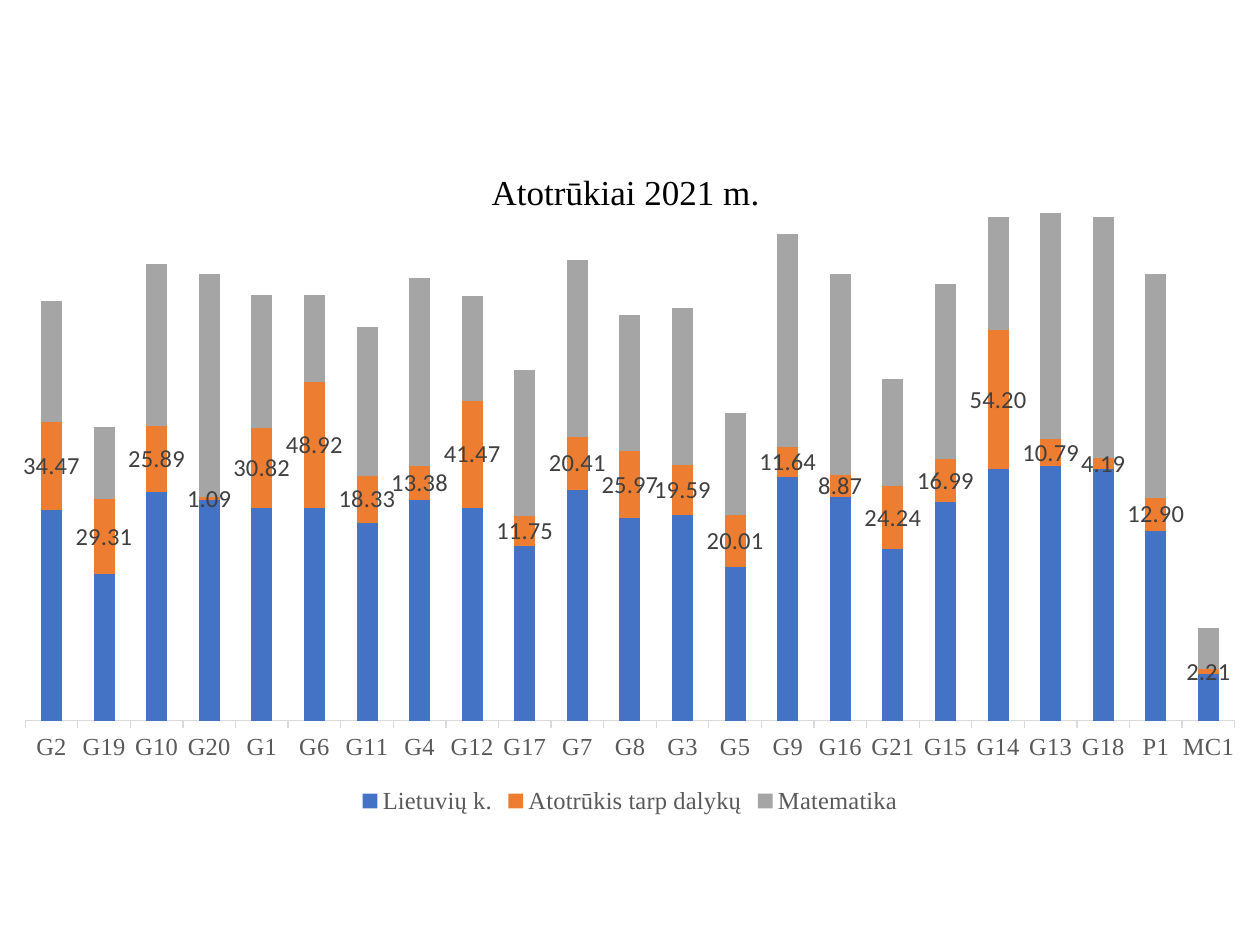
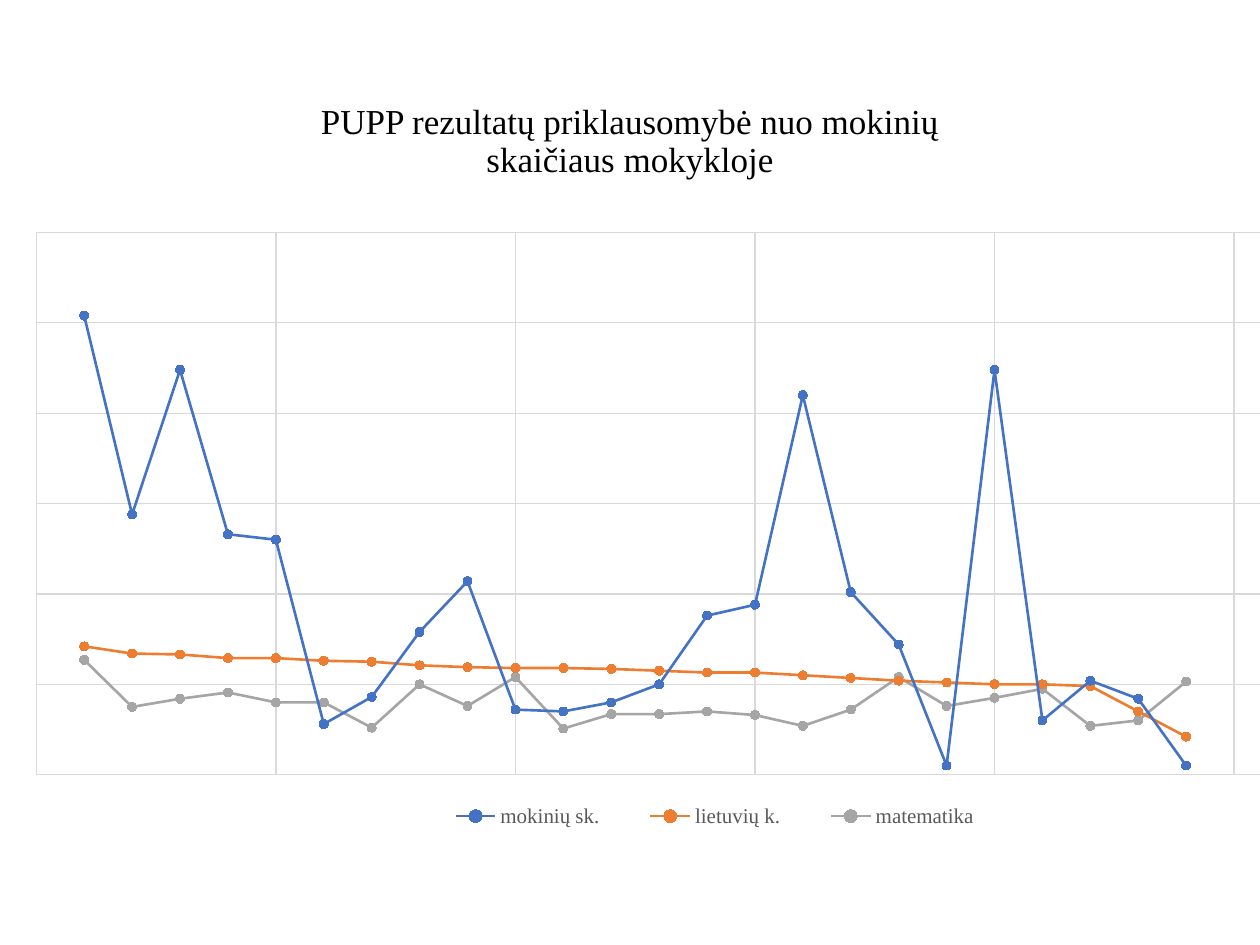
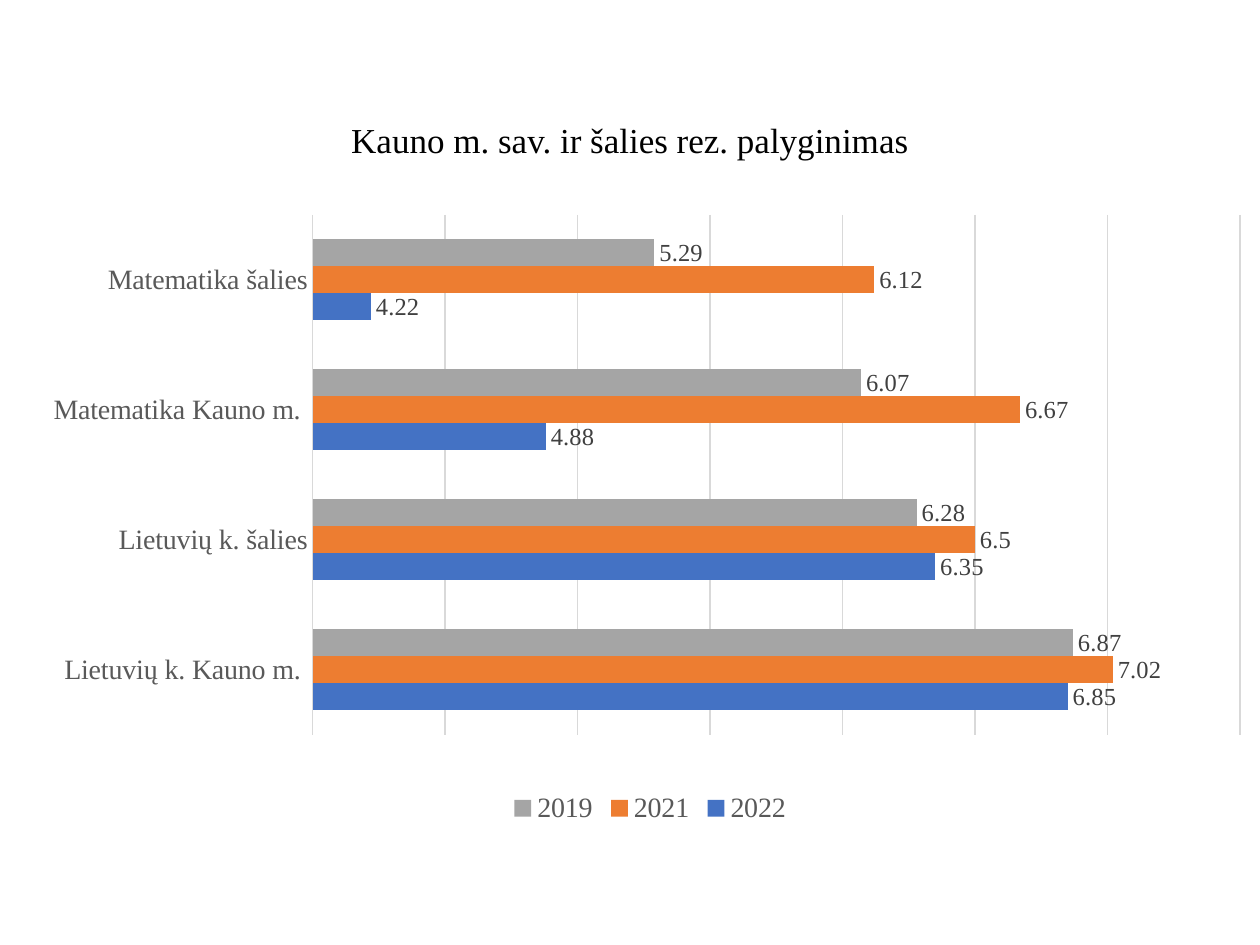
from lxml.etree import SubElement
from pptx import Presentation
from pptx.chart.data import CategoryChartData, XyChartData
from pptx.dml.color import RGBColor
from pptx.enum.chart import (XL_CHART_TYPE, XL_LABEL_POSITION, XL_LEGEND_POSITION,
                             XL_MARKER_STYLE, XL_TICK_LABEL_POSITION, XL_TICK_MARK)
from pptx.enum.text import MSO_ANCHOR, PP_ALIGN
from pptx.oxml.ns import qn
from pptx.util import Inches, Pt

BLACK = RGBColor(0x00, 0x00, 0x00)
AXIS_GREY = RGBColor(0x59, 0x59, 0x59)
LABEL_GREY = RGBColor(0x40, 0x40, 0x40)
RULE_GREY = RGBColor(0xD9, 0xD9, 0xD9)
BLUE = RGBColor(0x44, 0x72, 0xC4)
ORANGE = RGBColor(0xED, 0x7D, 0x31)
GREY = RGBColor(0xA5, 0xA5, 0xA5)
SERIES_COLOURS = (BLUE, ORANGE, GREY)

SERIF = "Times New Roman"
SANS = "Calibri"
COLUMNS, ROWS = 100, 75
SLIDE_WIDTH, SLIDE_HEIGHT = Inches(10), Inches(7.5)
TITLE_BOX = (6.9, 4, 86.2, 14.5)
LOW_TITLE_BOX = (6.9, 12.3, 86.2, 6.2)

GAP_CATEGORIES = ("G2", "G19", "G10", "G20", "G1", "G6", "G11", "G4", "G12", "G17", "G7", "G8",
                  "G3", "G5", "G9", "G16", "G21", "G15", "G14", "G13", "G18", "P1", "MC1")
GAP_SERIES = {
    "Lietuvių k.": (82, 57, 89, 86, 83, 83, 77, 86, 83, 68, 90, 79,
                    80, 60, 95, 87, 67, 85, 98, 99, 98, 74, 18),
    "Atotrūkis tarp dalykų": (34.47, 29.31, 25.89, 1.09, 30.82, 48.92, 18.33, 13.38,
                              41.47, 11.75, 20.41, 25.97, 19.59, 20.01, 11.64, 8.87,
                              24.24, 16.99, 54.2, 10.79, 4.19, 12.9, 2.21),
    "Matematika": (47, 28, 63, 87, 52, 34, 58, 73, 41, 57, 69, 53,
                   61, 40, 83, 78, 42, 68, 44, 88, 94, 87, 16),
}
SCHOOL_SERIES = {
    "mokinių sk. ": (508, 288, 448, 266, 260, 56, 86, 158, 214, 72, 70, 80,
                     100, 176, 188, 420, 202, 144, 10, 448, 60, 104, 84, 10),
    "lietuvių k. ": (142, 134, 133, 129, 129, 126, 125, 121, 119, 118, 118, 117,
                     115, 113, 113, 110, 107, 104, 102, 100, 100, 98, 70, 42),
    "matematika": (127, 75, 84, 91, 80, 80, 52, 100, 76, 108, 51, 67,
                   67, 70, 66, 54, 72, 108, 76, 85, 95, 54, 60, 103),
}
CITY_CATEGORIES = ("Lietuvių k. Kauno m. ", "Lietuvių k. šalies",
                   "Matematika Kauno m. ", "Matematika šalies")
CITY_SERIES = {
    "2022": (6.85, 6.35, 4.88, 4.22),
    "2021": (7.02, 6.5, 6.67, 6.12),
    "2019": (6.87, 6.28, 6.07, 5.29),
}


def apply(target, **values):
    for key, value in values.items():
        setattr(target, key, value)


def style_font(font, size, colour, name=SERIF):
    apply(font, size=Pt(size), name=name)
    font.color.rgb = colour


def style_line(line, colour, width):
    line.color.rgb = colour
    line.width = Pt(width)


def place(box):
    left, top, width, height = box
    across, down = SLIDE_WIDTH / COLUMNS, SLIDE_HEIGHT / ROWS
    return int(left * across), int(top * down), int(width * across), int(height * down)


def add_title(slide, wording, box):
    frame = slide.shapes.add_textbox(*place(box)).text_frame
    apply(frame, word_wrap=True, vertical_anchor=MSO_ANCHOR.MIDDLE)
    heading = frame.paragraphs[0]
    apply(heading, text=wording, alignment=PP_ALIGN.CENTER, line_spacing=0.9)
    for run in heading.runs:
        style_font(run.font, 20, BLACK)


def add_chart(slide, kind, box, data, legend_size):
    chart = slide.shapes.add_chart(kind, *place(box), data).chart
    apply(chart, has_title=False, has_legend=True)
    style_font(chart.font, 10, BLACK, SANS)
    apply(chart.legend, position=XL_LEGEND_POSITION.BOTTOM, include_in_layout=False)
    style_font(chart.legend.font, legend_size, AXIS_GREY)
    chart.plots[0].vary_by_categories = False
    return chart


def category_data(categories, series):
    data = CategoryChartData()
    data.categories = categories
    for name, values in series.items():
        data.add_series(name, values)
    return data


def numbered_data(series):
    data = XyChartData()
    for name, values in series.items():
        points = data.add_series(name)
        for number, value in enumerate(values, 1):
            points.add_data_point(number, value)
    return data


def set_layout(region, index, settings, percents):
    for former in region.findall(qn("c:layout")):
        region.remove(former)
    layout = SubElement(region, qn("c:layout"))
    region.insert(index, layout)
    manual = SubElement(layout, qn("c:manualLayout"))
    shares = {key: str(round(share / 100, 4)) for key, share in percents.items()}
    for key, value in {**settings, "xMode": "edge", "yMode": "edge", **shares}.items():
        SubElement(manual, qn("c:" + key)).set("val", value)


def set_plot_area(chart, **percents):
    area = chart.element.find(".//" + qn("c:plotArea"))
    set_layout(area, 0, {"layoutTarget": "inner"}, percents)


def set_legend_area(chart, **percents):
    legend = chart.element.find(".//" + qn("c:legend"))
    set_layout(legend, 1, {}, percents)


def style_category_axis(axis, size, tick):
    apply(axis, major_tick_mark=tick, minor_tick_mark=XL_TICK_MARK.NONE,
          has_major_gridlines=False,
          tick_label_position=XL_TICK_LABEL_POSITION.NEXT_TO_AXIS)
    style_font(axis.tick_labels.font, size, AXIS_GREY)
    style_line(axis.format.line, RULE_GREY, 0.75)


def hide_scale(axis, low, high, step, grid=True):
    apply(axis, minimum_scale=low, maximum_scale=high, major_unit=step,
          major_tick_mark=XL_TICK_MARK.NONE, has_major_gridlines=grid, visible=False)
    if grid:
        style_line(axis.major_gridlines.format.line, RULE_GREY, 0.75)


def fill_series(chart):
    for series, colour in zip(chart.plots[0].series, SERIES_COLOURS):
        series.invert_if_negative = False
        series.format.fill.solid()
        series.format.fill.fore_color.rgb = colour


def label_series(series, position, number_format, font_name):
    labels = series.data_labels
    apply(labels, show_value=True, position=position,
          number_format=number_format, number_format_is_linked=False)
    style_font(labels.font, 14, LABEL_GREY, font_name)


def gap_slide(slide):
    add_title(slide, "Atotrūkiai 2021 m. ", LOW_TITLE_BOX)
    chart = add_chart(slide, XL_CHART_TYPE.COLUMN_STACKED, (0, 15.47, 100, 49.6),
                      category_data(GAP_CATEGORIES, GAP_SERIES), 14)
    style_category_axis(chart.category_axis, 14, XL_TICK_MARK.OUTSIDE)
    hide_scale(chart.value_axis, 0, 200, 20, grid=False)
    apply(chart.plots[0], gap_width=150, overlap=100)
    fill_series(chart)
    label_series(chart.plots[0].series[1], XL_LABEL_POSITION.CENTER, "0.00", SANS)


def school_size_slide(slide):
    add_title(slide, "PUPP rezultatų priklausomybė nuo mokinių\nskaičiaus mokykloje", TITLE_BOX)
    chart = add_chart(slide, XL_CHART_TYPE.XY_SCATTER_LINES, (1.23, 16.25, 118.1, 51.3),
                      numbered_data(SCHOOL_SERIES), 12)
    set_plot_area(chart, x=1.4, y=4.3, w=96.6, h=83.9)
    set_legend_area(chart, x=27, y=91.1, w=40, h=7)
    hide_scale(chart.category_axis, 0, 30, 5)
    hide_scale(chart.value_axis, 0, 600, 100)
    for series, colour in zip(chart.plots[0].series, SERIES_COLOURS):
        series.smooth = False
        style_line(series.format.line, colour, 1.5)
        apply(series.marker, style=XL_MARKER_STYLE.CIRCLE, size=5)
        series.marker.format.fill.solid()
        series.marker.format.fill.fore_color.rgb = colour
        style_line(series.marker.format.line, colour, 0.75)


def city_slide(slide):
    add_title(slide, "Kauno m. sav. ir šalies rez. palyginimas", TITLE_BOX)
    chart = add_chart(slide, XL_CHART_TYPE.BAR_CLUSTERED, (2, 15.45, 99.2, 50.4),
                      category_data(CITY_CATEGORIES, CITY_SERIES), 16)
    set_plot_area(chart, x=23, y=3.2, w=74.2, h=81.9)
    style_category_axis(chart.category_axis, 16, XL_TICK_MARK.NONE)
    hide_scale(chart.value_axis, 4, 7.5, 0.5)
    chart.plots[0].gap_width = 182
    fill_series(chart)
    for series in chart.plots[0].series:
        label_series(series, XL_LABEL_POSITION.OUTSIDE_END, "General", SERIF)


def main():
    deck = Presentation()
    apply(deck, slide_width=SLIDE_WIDTH, slide_height=SLIDE_HEIGHT)
    for build in (gap_slide, school_size_slide, city_slide):
        build(deck.slides.add_slide(deck.slide_layouts[6]))
    deck.save("out.pptx")


if __name__ == "__main__":
    main()
